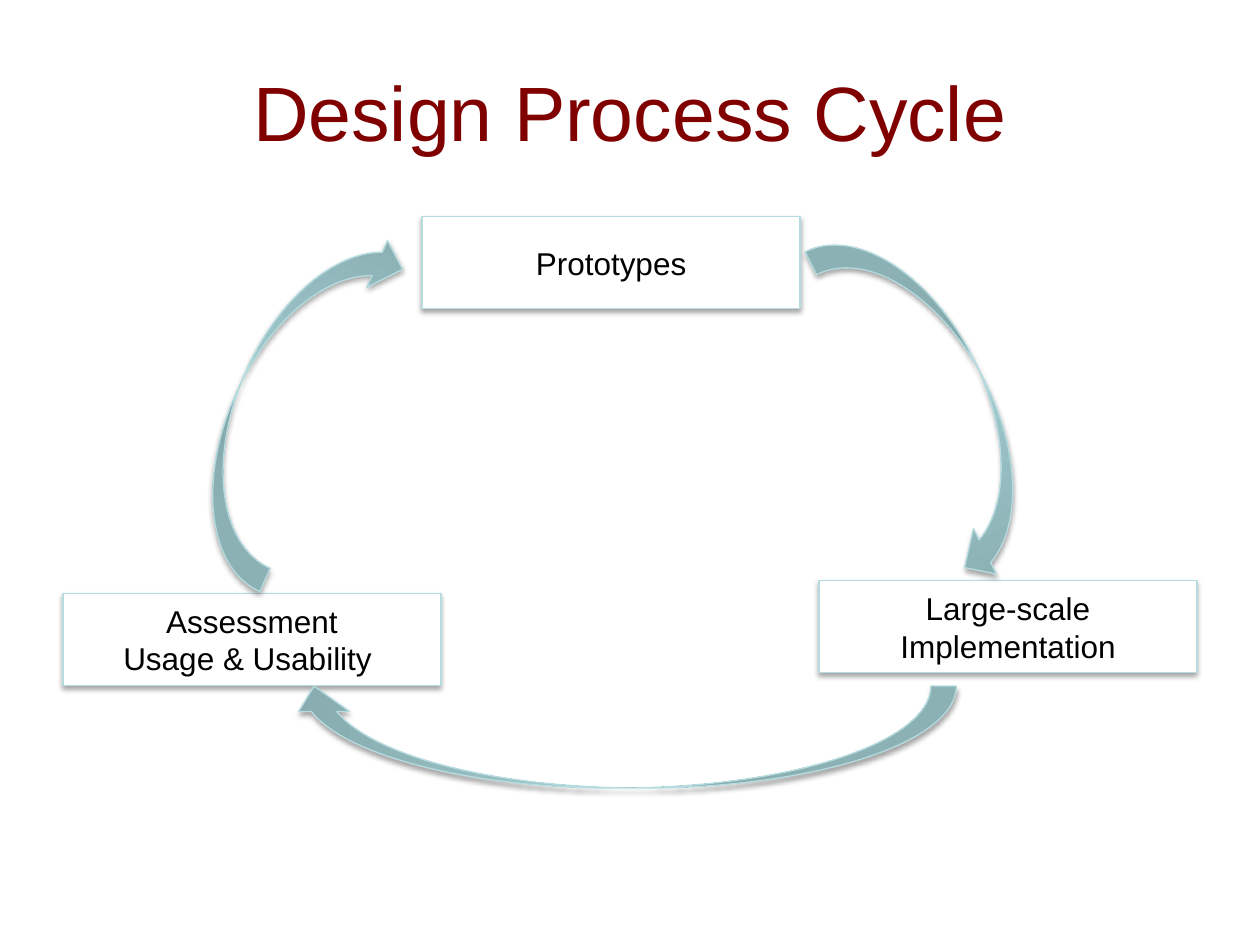
from lxml.etree import SubElement
from pptx import Presentation
from pptx.dml.color import RGBColor
from pptx.enum.shapes import MSO_SHAPE
from pptx.enum.text import MSO_ANCHOR, PP_ALIGN
from pptx.oxml import parse_xml
from pptx.oxml.ns import nsdecls, qn
from pptx.util import Inches, Pt

WIDE, HIGH = 10, 7.5
COLORS = {"title": "800000", "text": "000000", "box": "FFFFFF",
          "edge": "B6DCDF", "shade": "000000"}
STOPS = {0: "87ABAE", 80: "AFDEE2", 100: "AFE0E4"}
TITLE = {"size": Pt(44), "name": "Arial"}
LABEL = {"size": Pt(18), "name": "Arial"}
STEP = (0.3 * WIDE, 0.73)
STEPS = [
    (3.35, 1.72, ["Prototypes"]),
    (0.5, 4.71, ["Assessment", "Usage & Usability "]),
    (6.5, 4.61, ["Large-scale Implementation"]),
]
ARROWS = [  # centre x, centre y, length, rotation
    (7.43, 3.16, 3.01, 333.2),
    (4.94, 5.85, 5.3, 90),
    (2.3, 3.16, 3, 203.9),
]
THICK = 0.81


def color(key):
    return RGBColor.from_string(COLORS[key])


def style(para, look, key):
    para.alignment = PP_ALIGN.CENTER
    for name, value in look.items():
        setattr(para.font, name, value)
    para.font.color.rgb = color(key)


def finish(shape):
    """Give the shape its thin edge and soft shadow below."""
    shape.line.color.rgb = color("edge")
    shape.line.width = Pt(0.75)
    shape.shadow.inherit = False
    effects = shape._element.spPr.find(qn("a:effectLst"))
    shadow = SubElement(effects, qn("a:outerShdw"), blurRad=str(Pt(3.1)),
                        dist=str(Pt(1.8)), dir="5400000", rotWithShape="0")
    tint = SubElement(shadow, qn("a:srgbClr"), val=COLORS["shade"])
    SubElement(tint, qn("a:alpha"), val="35000")


def blend(shape):
    """Fill the shape with the upright gradient."""
    stops = "".join(f'<a:gs pos="{pos * 1000}"><a:srgbClr val="{tint}"/></a:gs>'
                    for pos, tint in STOPS.items())
    fill = parse_xml(f'<a:gradFill {nsdecls("a")} rotWithShape="1">'
                     f'<a:gsLst>{stops}</a:gsLst>'
                     '<a:lin ang="16200000" scaled="0"/></a:gradFill>')
    shape._element.spPr.find(qn("a:prstGeom")).addnext(fill)


def add_title(slide, box, text):
    title = slide.shapes.title
    title.left, title.top, title.width, title.height = map(Inches, box)
    title.text_frame.text = text
    title.text_frame.vertical_anchor = MSO_ANCHOR.MIDDLE
    style(title.text_frame.paragraphs[0], TITLE, "title")


def add_step(slide, box, lines):
    shape = slide.shapes.add_shape(MSO_SHAPE.RECTANGLE, *map(Inches, box))
    shape.fill.solid()
    shape.fill.fore_color.rgb = color("box")
    finish(shape)
    frame = shape.text_frame
    frame.word_wrap = True
    frame.vertical_anchor = MSO_ANCHOR.MIDDLE
    frame.text = "\n".join(lines)
    for para in frame.paragraphs:
        style(para, LABEL, "text")


def add_arrow(slide, box, turn):
    shape = slide.shapes.add_shape(MSO_SHAPE.CURVED_LEFT_ARROW, *map(Inches, box))
    shape.rotation = turn
    blend(shape)
    finish(shape)


def main():
    deck = Presentation()
    deck.slide_width, deck.slide_height = Inches(WIDE), Inches(HIGH)
    slide = deck.slides.add_slide(deck.slide_layouts[5])
    add_title(slide, (0.05 * WIDE, HIGH / 30, 0.9 * WIDE, HIGH / 6),
              "Design Process Cycle")
    for left, top, lines in STEPS:
        add_step(slide, (left, top, *STEP), lines)
    for x, y, size, turn in ARROWS:
        add_arrow(slide, (x - THICK / 2, y - size / 2, THICK, size), turn)
    deck.save("out.pptx")


if __name__ == "__main__":
    main()
